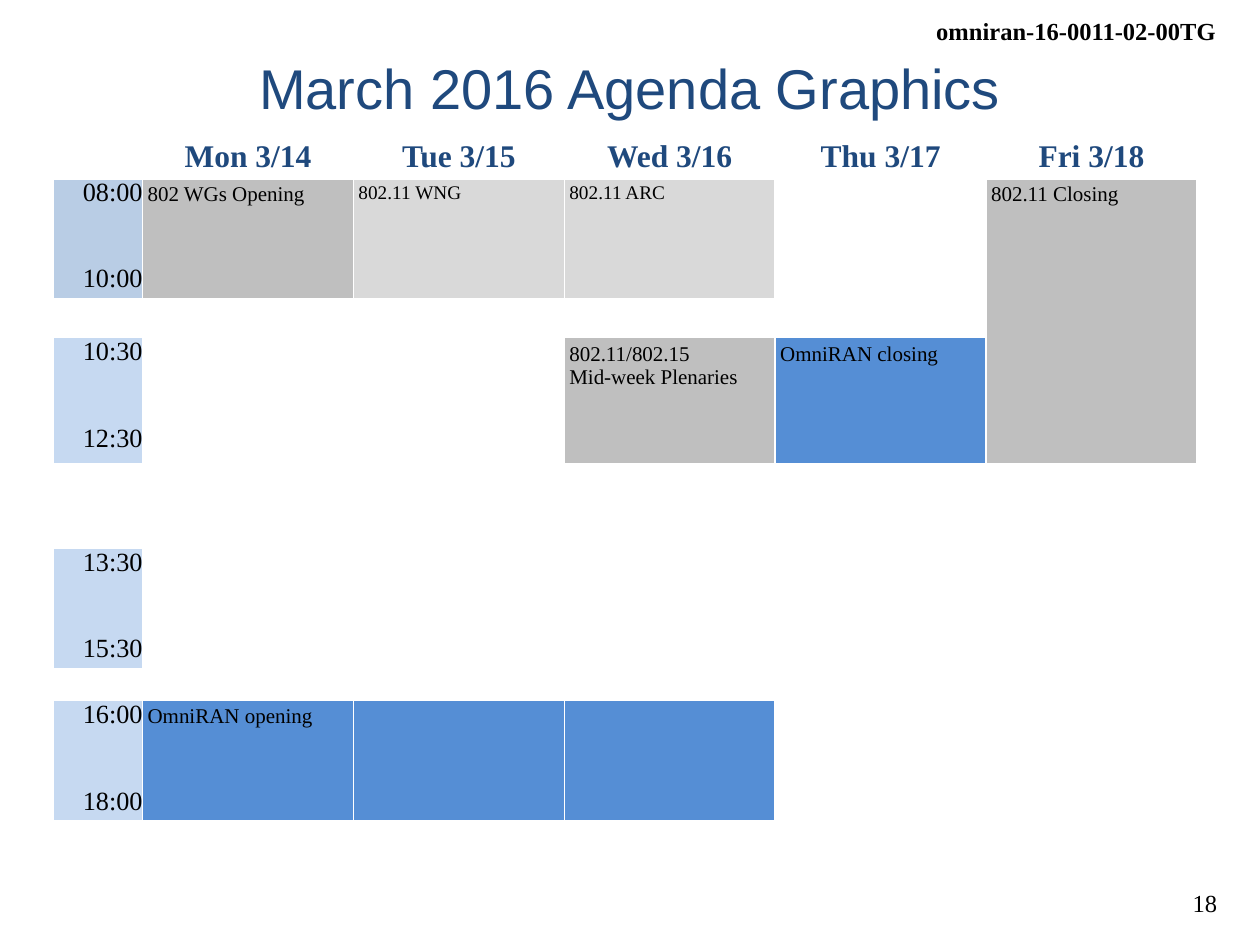
from lxml.etree import SubElement
from pptx import Presentation
from pptx.dml.color import RGBColor
from pptx.enum.text import MSO_ANCHOR, PP_ALIGN
from pptx.oxml.ns import qn
from pptx.util import Inches, Pt

SERIF = "Times New Roman"
NAVY, BLACK, WHITE = "1F497D", "000000", "FFFFFF"
TIME_BLUE, PALE_BLUE, BLUE = "B9CDE5", "C6D9F1", "558ED5"
GREY, LIGHT_GREY = "BFBFBF", "D9D9D9"

DAYS = ["Mon 3/14", "Tue 3/15", "Wed 3/16", "Thu 3/17", "Fri 3/18"]
COL_WIDTHS = [0.71] + [1.67] * len(DAYS)
ROW_HEIGHTS = [0.3, 0.94, 0.31, 1, 0.33, 0.34, 0.25, 0.66, 0.25, 0.95, 0.3, 0.3]

# row: (start, end, fill)
TIMES = {
    1: ("08:00", "10:00", TIME_BLUE),
    3: ("10:30", "12:30", PALE_BLUE),
    6: ("13:30", "15:30", PALE_BLUE),
    9: ("16:00", "18:00", PALE_BLUE),
}
# (row, column): (text, size, fill)
SESSIONS = {
    (1, 1): ("802 WGs Opening", 12, GREY),
    (1, 2): ("802.11 WNG", 11, LIGHT_GREY),
    (1, 3): ("802.11 ARC", 11, LIGHT_GREY),
    (1, 5): ("802.11 Closing", 12, GREY),
    (3, 3): ("802.11/802.15\nMid-week Plenaries", 12, GREY),
    (3, 4): ("OmniRAN closing", 12, BLUE),
    (9, 1): ("OmniRAN opening", 12, BLUE),
    (9, 2): ("", 12, BLUE),
    (9, 3): ("", 12, BLUE),
}
# (first row, column): last row
MERGES = {(1, 5): 3, (4, 0): 5, (4, 1): 6, (4, 2): 5, (4, 3): 5, (4, 4): 5,
          (5, 5): 9, (6, 0): 7, (6, 2): 7, (6, 3): 7, (6, 4): 9}
MERGES.update({(10, col): 11 for col in range(5)})


def rgb(value):
    return RGBColor.from_string(value)


def write(tf, text, size=12, font=SERIF, color=BLACK, bold=False,
          align=PP_ALIGN.LEFT, gap=0):
    """Write one paragraph per line, with gap points between them."""
    for i, line in enumerate(text.split("\n")):
        p = tf.paragraphs[0] if i == 0 else tf.add_paragraph()
        p.alignment = align
        p.space_before = Pt(gap if i else 0)
        r = p.add_run()
        r.text = line
        r.font.size, r.font.name, r.font.bold = Pt(size), font, bold
        r.font.color.rgb = rgb(color)


def set_margins(box, inset):
    box.margin_left = box.margin_right = Inches(inset)
    box.margin_top = box.margin_bottom = Inches(inset)


def add_label(s, text, x, y, w, h, **fmt):
    tf = s.shapes.add_textbox(Inches(x), Inches(y), Inches(w), Inches(h)).text_frame
    tf.word_wrap = False
    write(tf, text, size=14, align=PP_ALIGN.RIGHT, **fmt)


def add_title(s, text, x, y, w, h):
    sp = s.shapes.title
    sp.left, sp.top, sp.width, sp.height = map(Inches, (x, y, w, h))
    sp.text_frame.vertical_anchor = MSO_ANCHOR.MIDDLE
    write(sp.text_frame, text, size=32, font="Arial", color=NAVY,
          align=PP_ALIGN.CENTER)


def style_cell(cell, fill, bottom=1):
    """Give the cell white borders, then its fill."""
    tcPr = cell._tc.get_or_add_tcPr()
    for side, width in zip("LRTB", (1, 1, 1, bottom)):
        ln = SubElement(tcPr, qn(f"a:ln{side}"), w=str(Pt(width)))
        SubElement(SubElement(ln, qn("a:solidFill")), qn("a:srgbClr"), val=WHITE)
    cell.fill.solid()
    cell.fill.fore_color.rgb = rgb(fill)


def fill_cell(cell, row, col):
    """Place the day, time or session that belongs at this row and column."""
    fill, inset = WHITE, 0
    if row == 0 and col:
        write(cell.text_frame, DAYS[col - 1], size=18, color=NAVY, bold=True,
              align=PP_ALIGN.CENTER)
    elif col == 0 and row in TIMES:
        start, end, fill = TIMES[row]
        write(cell.text_frame, f"{start}\n{end}", size=15,
              align=PP_ALIGN.RIGHT, gap=33)
    elif (row, col) in SESSIONS:
        text, size, fill = SESSIONS[row, col]
        inset = 0.04
        if text:
            write(cell.text_frame, text, size=size)
    set_margins(cell, inset)
    if not cell.text_frame.text:
        end = cell.text_frame.paragraphs[0]._p.get_or_add_endParaRPr()
        end.set("sz", "800")
    style_cell(cell, fill, bottom=3 if row == 0 else 1)


def add_agenda(s, x, y, w, h):
    table = s.shapes.add_table(len(ROW_HEIGHTS), len(COL_WIDTHS), Inches(x),
                               Inches(y), Inches(w), Inches(h)).table
    table.first_row = table.horz_banding = False
    for column, share in zip(table.columns, COL_WIDTHS):
        column.width = Inches(w * share / sum(COL_WIDTHS))
    for row, share in zip(table.rows, ROW_HEIGHTS):
        row.height = Inches(h * share / sum(ROW_HEIGHTS))
    for row in range(len(ROW_HEIGHTS)):
        for col in range(len(COL_WIDTHS)):
            fill_cell(table.cell(row, col), row, col)
    for (row, col), last in MERGES.items():
        table.cell(row, col).merge(table.cell(last, col))


def main():
    prs = Presentation()
    prs.slide_width, prs.slide_height = Inches(10), Inches(7.5)
    s = prs.slides.add_slide(prs.slide_layouts[5])
    add_label(s, "omniran-16-0011-02-00TG", 7.31, 0.08, 2.44, 0.34, bold=True)
    add_label(s, "18", 9.33, 7, 0.43, 0.34)
    add_title(s, "March 2016 Agenda Graphics", 0.5, 0.3, 9, 0.78)
    add_agenda(s, 0.42, 1.11, 9.08, 5.93)
    prs.save("out.pptx")


if __name__ == "__main__":
    main()
